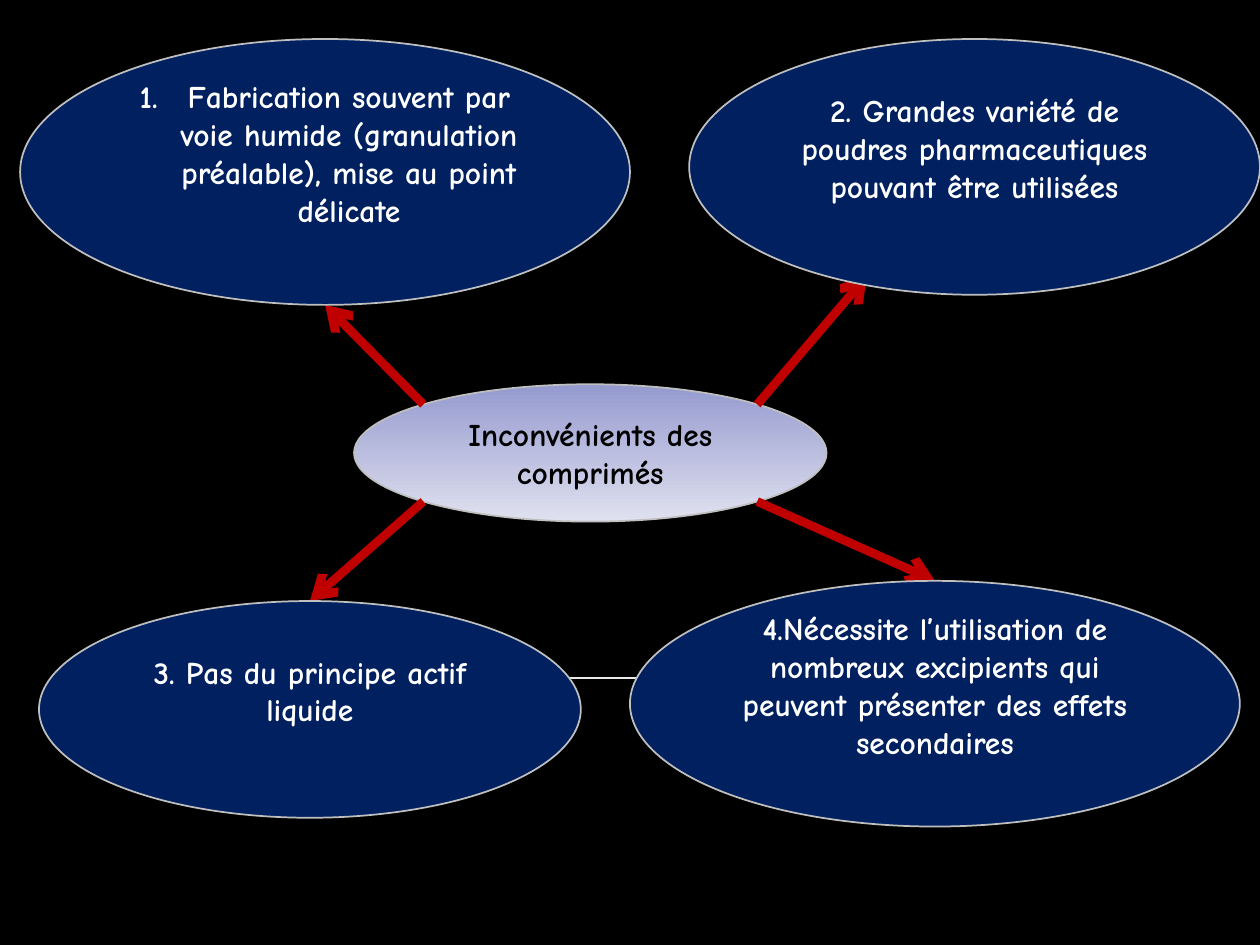
import pptx
import pptx.dml.color
import pptx.enum.shapes
import pptx.enum.text
import pptx.oxml.ns
import pptx.util
from lxml import etree

Inches = pptx.util.Inches
Pt = pptx.util.Pt
qn = pptx.oxml.ns.qn


def color(hex_value):
    return pptx.dml.color.RGBColor.from_string(hex_value)


def write(box, text, *, font, size, ink, bold=True, lift=0, numbered=False):
    """Centre text in a shape; lift is extra bottom inset that raises it."""
    frame = box.text_frame
    frame.word_wrap = True
    frame.vertical_anchor = pptx.enum.text.MSO_ANCHOR.MIDDLE
    if lift:
        frame.margin_top = 0
        frame.margin_bottom = Inches(lift)
    para = frame.paragraphs[0]
    para.alignment = pptx.enum.text.PP_ALIGN.CENTER
    if numbered:
        properties = para._p.get_or_add_pPr()
        properties.set("marL", str(Inches(0.38)))
        properties.set("indent", str(-Inches(0.38)))
        etree.SubElement(properties, qn("a:buAutoNum"), type="arabicPeriod")
    span = para.add_run()
    span.text = text
    span.font.name = font
    span.font.size = Pt(size)
    span.font.bold = bold
    span.font.color.rgb = color(ink)


class Diagram:
    font = "Comic Neue"
    text_size = 18
    navy = "002060"
    red = "C00000"
    outline = "BFBFBF"
    center_gradient = ("959ACF", "E0E1EF")

    def __init__(self, page):
        self.page = page
        page.background.fill.solid()
        page.background.fill.fore_color.rgb = color("000000")

    def ellipse(self, place):
        oval = pptx.enum.shapes.MSO_SHAPE.OVAL
        box = self.page.shapes.add_shape(oval, *map(Inches, place))
        box.shadow.inherit = False
        box.line.color.rgb = color(self.outline)
        box.line.width = Pt(1)
        return box

    def center(self, place, text):
        box = self.ellipse(place)
        box.fill.gradient()
        box.fill.gradient_angle = 270
        for stop, shade in zip(box.fill.gradient_stops, self.center_gradient):
            stop.color.rgb = color(shade)
        write(box, text, font=self.font, size=self.text_size, ink="000000")

    def drawback(self, place, text, numbered=False):
        box = self.ellipse(place)
        box.fill.solid()
        box.fill.fore_color.rgb = color(self.navy)
        write(box, text, font=self.font, size=self.text_size, ink="FFFFFF",
              lift=0.3, numbered=numbered)

    def line(self, start, end, ink, width):
        straight = pptx.enum.shapes.MSO_CONNECTOR.STRAIGHT
        link = self.page.shapes.add_connector(straight, *map(Inches, start + end))
        link.line.color.rgb = color(ink)
        link.line.width = Pt(width)
        etree.SubElement(link._element.spPr, qn("a:effectLst"))
        return link

    def arrow(self, start, end):
        link = self.line(start, end, self.red, 5)
        etree.SubElement(link.line._get_or_add_ln(), qn("a:tailEnd"), type="arrow")


def main():
    deck = pptx.Presentation()
    deck.slide_width, deck.slide_height = Inches(10), Inches(7.5)
    diagram = Diagram(deck.slides.add_slide(deck.slide_layouts[6]))

    diagram.line((0.75, 5.38), (9.42, 5.38), "E9E9E8", 0.75)
    diagram.center((2.81, 3.05, 3.75, 1.09), "Inconvénients des comprimés")

    left, right, top, bottom = 3.36, 6.01, 3.21, 3.98
    diagram.arrow((right, top), (6.88, 2.19))
    diagram.arrow((left, top), (2.58, 2.42))
    diagram.arrow((right, bottom), (7.42, 4.61))
    diagram.arrow((left, bottom), (2.46, 4.77))

    diagram.drawback(
        (0.16, 0.31, 4.84, 2.11),
        "Fabrication souvent par voie humide (granulation préalable), "
        "mise au point délicate", numbered=True)
    diagram.drawback((0.31, 4.77, 4.3, 1.72), "3. Pas du principe actif liquide")
    diagram.drawback(
        (5.47, 0.31, 4.53, 2.03),
        "2. Grandes variété de poudres pharmaceutiques pouvant être utilisées")
    diagram.drawback(
        (5, 4.61, 4.84, 1.95),
        "4.Nécessite l’utilisation de nombreux excipients qui peuvent "
        "présenter des effets secondaires")

    deck.save("out.pptx")


if __name__ == "__main__":
    main()
